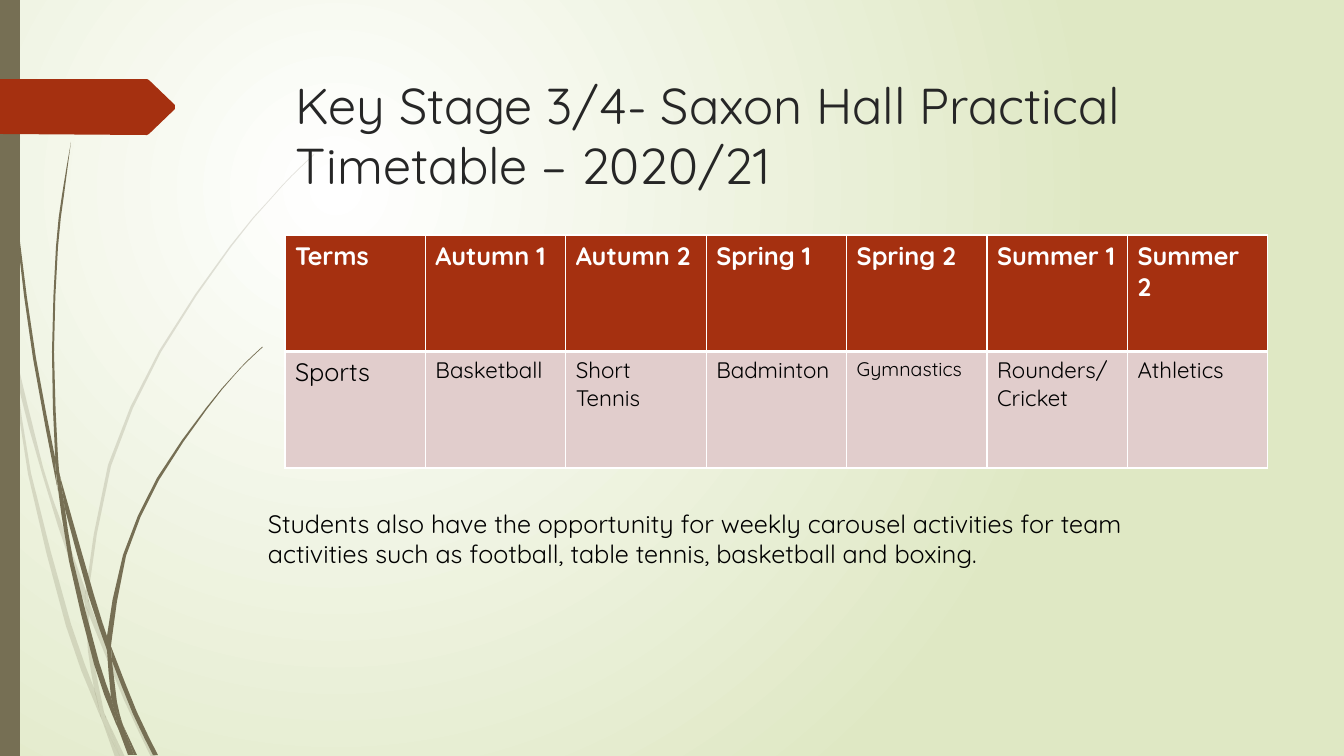
"""Build a slide with a sports timetable beside a decoration of tapering stems."""
from lxml.etree import SubElement
from pptx import Presentation
from pptx.dml.color import RGBColor
from pptx.enum.shapes import MSO_SHAPE
from pptx.enum.text import MSO_AUTO_SIZE
from pptx.oxml import parse_xml
from pptx.oxml.ns import nsdecls, qn
from pptx.util import Emu, Pt

PX = 914400 / 100.8
FONT = "Quicksand"
COLORS = {"white": "FFFFFF", "green": "DFE8C4", "olive": "766F54", "rust": "A53010",
          "pink": "E1CDCC", "title": "262626", "black": "000000"}

TITLE = "Key Stage 3/4- Saxon Hall Practical Timetable – 2020/21"
NOTE = ("Students also have the opportunity for weekly carousel activities for team "
        "activities such as football, table tennis, basketball and boxing.")
TERMS = ["Terms", "Autumn 1", "Autumn 2", "Spring 1", "Spring 2", "Summer 1", "Summer 2"]
SPORTS = ["Sports", "Basketball", "Short Tennis", "Badminton", "Gymnastics",
          "Rounders/ Cricket", "Athletics"]
SPORT_SIZES = [18, 16, 16, 16, 14, 16, 16]

# Each blade is a pair of edges: one runs down the slide, the other back up.
PALE_BLADES = [
    ([(0, 301), (10, 347), (11, 353)], [(11, 353), (9, 325), (0, 284)]),
    ([(14, 348), (43, 467), (62, 524), (86, 591)],
     [(85, 604), (58, 526), (29, 428), (17, 379)]),
    ([(89, 601), (93, 612), (128, 698), (156, 757)], [(151, 757), (124, 700), (89, 615)]),
    ([(106, 717), (125, 757)], [(120, 757)]),
    ([(11, 353), (17, 379), (31, 473), (71, 624), (94, 688), (100, 713), (102, 720)],
     [(102, 720), (93, 699), (66, 626), (28, 474), (11, 353)]),
    ([(85, 604), (88, 651), (94, 688), (97, 698), (106, 717)],
     [(106, 717), (104, 712), (92, 651), (89, 615), (89, 613), (85, 604)]),
    ([(314, 154), (291, 176), (270, 199), (230, 246), (159, 351), (108, 465), (86, 589),
      (86, 591), (89, 601)],
     [(89, 601), (89, 589), (111, 466), (161, 352), (231, 247), (270, 200), (292, 176),
      (314, 155)]),
    ([(102, 720), (115, 757)], [(120, 757)]),
    ([(86, 591), (85, 604), (89, 613)], [(89, 615), (89, 601)]),
    ([(94, 688), (100, 713), (102, 720), (120, 757)], [(106, 717), (97, 698), (94, 688)]),
]
DARK_BLADES = [
    ([(3, 0), (4, 48), (7, 111), (17, 235), (33, 358), (56, 481), (57, 485)],
     [(55, 461), (55, 457), (36, 358), (19, 234), (8, 110), (5, 48), (4, 0)]),
    ([(60, 476), (94, 595), (107, 636)], [(107, 650), (89, 597), (65, 509)]),
    ([(111, 646), (114, 654), (137, 712), (158, 755)], [(153, 755), (133, 714), (112, 661)]),
    ([(57, 481), (69, 561), (94, 664), (112, 714), (118, 728)],
     [(117, 723), (111, 697), (99, 662), (73, 560), (65, 509), (57, 481)]),
    ([(71, 142), (62, 195), (56, 247), (52, 352), (55, 453), (60, 476)],
     [(60, 476), (58, 457), (54, 352), (58, 247), (64, 195), (71, 142)]),
    ([(123, 725), (137, 755)], [(134, 755)]),
    ([(55, 453), (55, 457), (57, 481), (65, 509)], [(60, 476)]),
    ([(262, 347), (247, 361), (233, 376), (206, 408), (157, 478), (123, 555), (107, 636),
      (111, 646)],
     [(112, 638), (126, 556), (159, 480), (207, 409), (233, 377), (247, 362), (263, 347)]),
    ([(118, 728), (128, 755)], [(132, 755)]),
    ([(107, 650), (111, 697), (117, 712), (123, 725)],
     [(122, 722), (117, 702), (112, 661), (110, 656), (107, 650)]),
    ([(107, 636), (107, 650), (112, 661)], [(111, 646)]),
    ([(111, 697), (117, 723), (118, 728), (131, 755)],
     [(134, 755), (123, 725), (117, 712), (111, 697)]),
]
TAG = [(0, 79), (147, 79), (149, 80), (175, 105), (175, 109), (149, 134), (147, 135), (0, 134)]


def px(n):
    return Emu(round(n * PX))


def rgb(name):
    return RGBColor.from_string(COLORS[name])


def paint(shape, color):
    shape.shadow.inherit = False
    shape.fill.solid()
    shape.fill.fore_color.rgb = rgb(color)
    shape.line.fill.background()


def smooth(edge):
    """Add the spline midpoint between each two knots."""
    ends = [edge[0], *edge, edge[-1]]
    points = []
    for a, b, c, d in zip(ends, ends[1:], ends[2:], ends[3:]):
        middle = tuple((9 * (q + r) - p - s) / 16 for p, q, r, s in zip(a, b, c, d))
        points += [b, middle]
    return points + [edge[-1]]


def add_outline(shapes, outline, color):
    points = [(px(x), px(y)) for x, y in outline]
    builder = shapes.build_freeform(*points[0])
    builder.add_line_segments(points[1:])
    shape = builder.convert_to_shape()
    paint(shape, color)
    return shape


def add_blades(shapes, blades, alpha):
    for down, up in blades:
        outline = list(dict.fromkeys(smooth(down) + smooth(up)))
        blade = add_outline(shapes, outline, "olive")
        if alpha < 100:
            color = blade._element.spPr.find(qn("a:solidFill"))[0]
            SubElement(color, qn("a:alpha"), val=str(alpha * 1000))


def style(tf, size, color, bold=False):
    for r in tf.paragraphs[0].runs:
        r.font.name, r.font.size, r.font.bold = FONT, Pt(size), bold
        r.font.color.rgb = rgb(color)


def add_text(shapes, box, text, size, color):
    tf = shapes.add_textbox(*map(px, box)).text_frame
    tf.word_wrap = True
    tf.text = text
    style(tf, size, color)
    return tf


def set_borders(cell, widths):
    tcPr = cell._tc.get_or_add_tcPr()
    for i, (side, width) in enumerate(zip("LRTB", widths)):
        tcPr.insert(i, parse_xml(
            f'<a:ln{side} {nsdecls("a")} w="{Pt(width)}"><a:solidFill>'
            f'<a:srgbClr val="{COLORS["white"]}"/></a:solidFill></a:ln{side}>'))


def add_timetable(shapes):
    table = shapes.add_table(2, len(TERMS), px(285), px(235), px(983), px(233)).table
    rows = [(TERMS, [18] * len(TERMS), "white", "rust", True, (1, 1, 1, 3)),
            (SPORTS, SPORT_SIZES, "black", "pink", False, (1, 1, 3, 1))]
    for i, (texts, sizes, color, fill, bold, borders) in enumerate(rows):
        for j, (text, size) in enumerate(zip(texts, sizes)):
            cell = table.cell(i, j)
            cell.text = text
            style(cell.text_frame, size, color, bold)
            cell.fill.solid()
            cell.fill.fore_color.rgb = rgb(fill)
            set_borders(cell, borders)


def set_background(s):
    fill = s.background.fill
    fill.gradient()
    for stop, color in zip(fill.gradient_stops, ("white", "green")):
        stop.color.rgb = rgb(color)
    grad = s._element.find(".//" + qn("a:gradFill"))
    grad.replace(grad.find(qn("a:lin")), parse_xml(
        f'<a:path {nsdecls("a")} path="circle">'
        '<a:fillToRect l="50000" t="50000" r="100000" b="100000"/></a:path>'))


def main():
    prs = Presentation()
    prs.slide_width, prs.slide_height = px(1344), px(756)
    s = prs.slides.add_slide(prs.slide_layouts[6])
    set_background(s)
    add_blades(s.shapes, PALE_BLADES, 20)
    add_blades(s.shapes, DARK_BLADES, 100)
    bar = s.shapes.add_shape(MSO_SHAPE.RECTANGLE, 0, 0, px(20), px(756))
    paint(bar, "olive")
    add_outline(s.shapes, TAG, "rust")
    add_text(s.shapes, (286, 69, 983, 141), TITLE, 36, "title")
    add_timetable(s.shapes)
    note = add_text(s.shapes, (258, 503, 972, 72), NOTE, 18, "black")
    note.auto_size = MSO_AUTO_SIZE.SHAPE_TO_FIT_TEXT
    prs.save("out.pptx")


if __name__ == "__main__":
    main()
